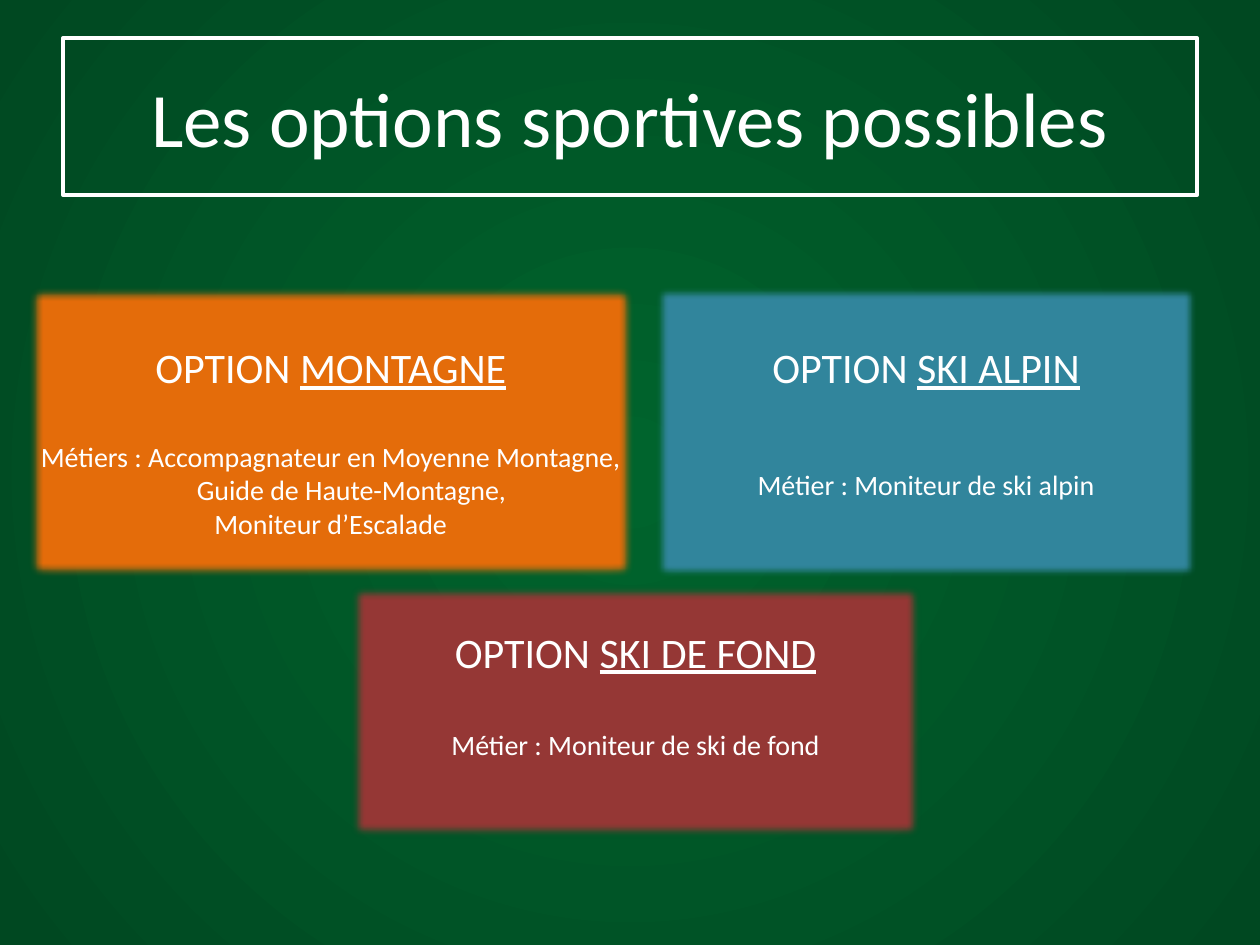
from lxml import etree
from pptx import Presentation
from pptx.dml.color import RGBColor
from pptx.enum import shapes, text
from pptx.oxml import ns, parse_xml
from pptx.util import Inches, Pt

HUES = {
    "inner": "00642D", "outer": "004821", "white": "FFFFFF",
    "red": "953735", "blue": "31859C", "orange": "E46C0A",
}


def hue(name):
    return RGBColor.from_string(HUES[name])


def add_run(para, words, size, under=False):
    run = para.add_run()
    run.text = words
    run.font.name = "Calibri"
    run.font.size = Pt(size)
    run.font.color.rgb = hue("white")
    if under:
        run.font.underline = True


deck = Presentation()
deck.slide_width, deck.slide_height = Inches(10), Inches(7.5)
slide = deck.slides.add_slide(deck.slide_layouts[5])

# Background: green glow from the centre
fill = slide.background.fill
fill.gradient()
for stop, name in zip(fill.gradient_stops, ("inner", "outer")):
    stop.color.rgb = hue(name)
grad = slide.element.find(".//" + ns.qn("a:gradFill"))
grad.replace(grad.find(ns.qn("a:lin")), parse_xml(
    f'<a:path {ns.nsdecls("a")} path="circle">'
    '<a:fillToRect l="50000" t="50000" r="50000" b="50000"/></a:path>'))

# Framed title
title = slide.shapes.title
title.left, title.top = Inches(0.5), Inches(0.3)
title.width, title.height = Inches(9), Inches(1.25)
title.line.color.rgb = hue("white")
title.line.width = Pt(2)
frame = title.text_frame
frame.vertical_anchor = text.MSO_ANCHOR.MIDDLE
frame.paragraphs[0].alignment = text.PP_ALIGN.CENTER
add_run(frame.paragraphs[0], "Les options sportives possibles", 44)

# Option cards: box, colour, top inset, option, gap in points, jobs
cards = [
    ((2.76, 4.62, 4.57, 2.05), "red", 0.35, "SKI DE FOND", 29,
     ["Métier : Moniteur de ski de fond"]),
    ((5.18, 2.25, 4.34, 2.36), "blue", 0.46, "SKI ALPIN", 43,
     ["Métier : Moniteur de ski alpin"]),
    ((0.2, 2.25, 4.85, 2.36), "orange", 0.46, "MONTAGNE", 27,
     ["Métiers : Accompagnateur en Moyenne Montagne, Guide de Haute-Montagne, ",
      "Moniteur d’Escalade"]),
]
for box, name, inset, option, gap, jobs in cards:
    card = slide.shapes.add_shape(
        shapes.MSO_SHAPE.RECTANGLE, *[Inches(n) for n in box])
    card.shadow.inherit = False
    card.fill.solid()
    card.fill.fore_color.rgb = hue(name)
    card.line.fill.background()
    soft = card.element.spPr.find(ns.qn("a:effectLst"))
    etree.SubElement(soft, ns.qn("a:softEdge"), rad=str(Pt(5)))

    frame = card.text_frame
    frame.word_wrap = True
    frame.vertical_anchor = text.MSO_ANCHOR.TOP
    frame.margin_top = Inches(inset)
    head = frame.paragraphs[0]
    add_run(head, "OPTION ", 24)
    add_run(head, option, 24, under=True)
    for job in jobs:
        add_run(frame.add_paragraph(), job, 16)
    frame.paragraphs[1].space_before = Pt(gap)

    # Centred with a hanging indent
    for para in frame.paragraphs:
        para.alignment = text.PP_ALIGN.CENTER
        props = para._p.get_or_add_pPr()
        props.set("marL", str(Inches(0.38)))
        props.set("indent", str(Inches(-0.38)))

deck.save("out.pptx")
